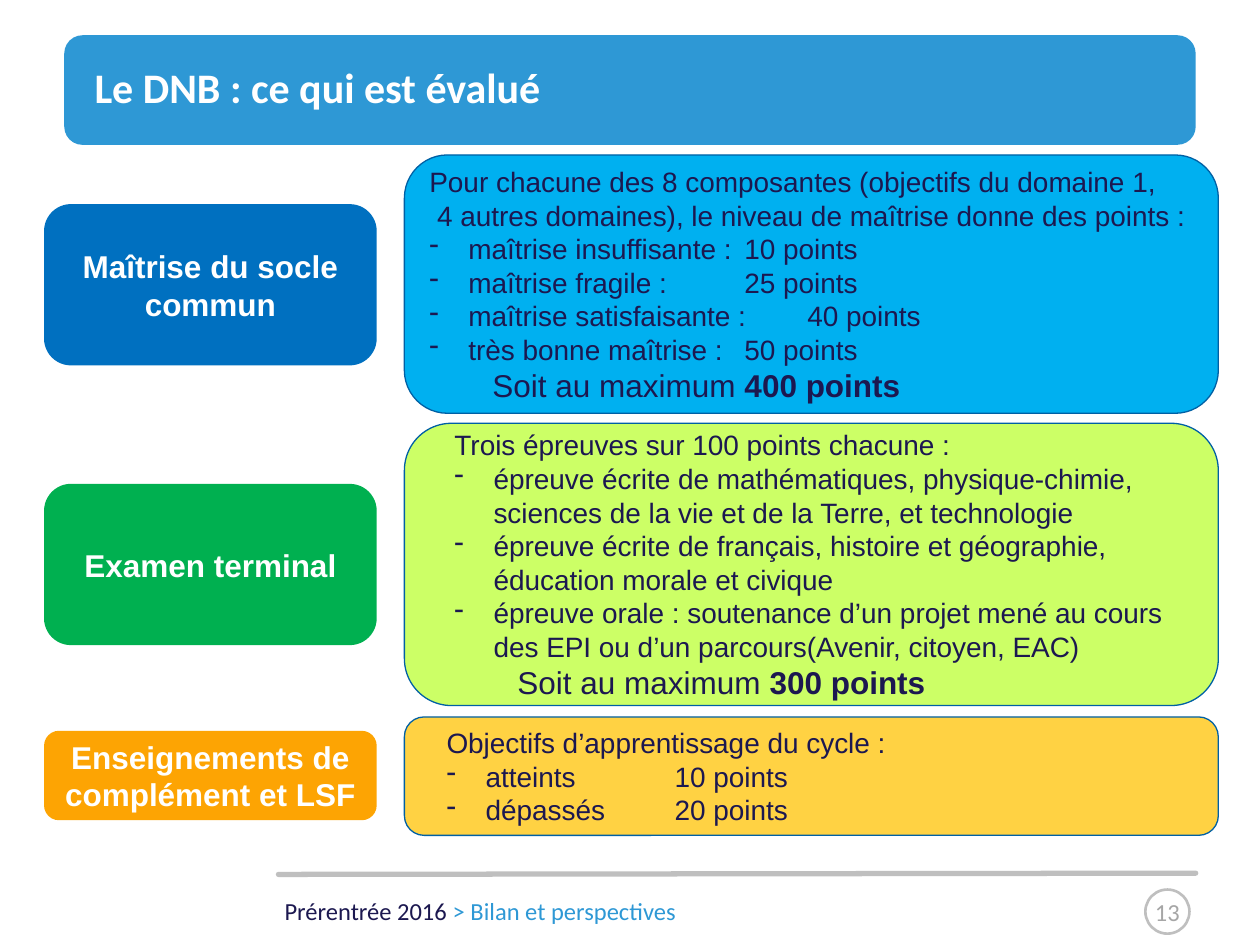
from collections import namedtuple

from lxml.etree import SubElement
from pptx import Presentation
from pptx.dml.color import RGBColor
from pptx.enum.shapes import MSO_CONNECTOR, MSO_SHAPE
from pptx.enum.text import MSO_ANCHOR as Anchor, MSO_AUTO_SIZE as AutoSize, PP_ALIGN as Align
from pptx.oxml.ns import qn
from pptx.util import Inches, Pt

Box = namedtuple("Box", "left top width height")
CELL = Inches(0.1)  # the slide is a grid of 100 columns by 75 rows
COLUMNS, ROWS = 100, 75
LABEL_LEFT, LABEL_WIDTH = 3.5, 26.4
PANEL_LEFT, PANEL_WIDTH = 32.1, 64.6
HANGING = 0.31
INK, WHITE, BLUE, GREY, EDGE = "1C1850", "FFFFFF", "2E98D5", "BFBFBF", "0060A4"


def cells(count):
    return round(count * CELL)


def colour(hex_text):
    return RGBColor.from_string(hex_text)


def add_span(para, text, size, ink=INK, bold=False, font="Arial"):
    span = para.add_run()
    span.text = text
    span.font.size, span.font.bold, span.font.name = Pt(size), bold, font
    span.font.color.rgb = colour(ink)


def add_block(page, kind, box, fill=None, edge=None, edge_width=0.75):
    block = page.shapes.add_shape(kind, *map(cells, box))
    block.shadow.inherit = False
    if fill:
        block.fill.solid()
        block.fill.fore_color.rgb = colour(fill)
    else:
        block.fill.background()
    if edge:
        block.line.color.rgb = colour(edge)
        block.line.width = Pt(edge_width)
    else:
        block.line.fill.background()
    block.text_frame.word_wrap = True
    block.text_frame.vertical_anchor = Anchor.MIDDLE
    return block


def set_indent(para, left, bulleted):
    props = para._p.get_or_add_pPr()
    hang = HANGING if bulleted else 0
    props.set("marL", str(Inches(left + hang)))
    props.set("indent", str(-Inches(hang)))
    if bulleted:
        SubElement(props, qn("a:buFontTx"))
        SubElement(props, qn("a:buChar")).set("char", "-")


def add_title(page, box, text):
    add_block(page, MSO_SHAPE.ROUNDED_RECTANGLE, box, BLUE)
    title = page.shapes.title
    page.shapes._spTree.append(title._element)  # in front of its banner
    title.left, title.top = cells(box.left + 2.4), cells(box.top - 1)
    title.width, title.height = cells(box.width - 2.4), cells(box.height + 1.5)
    frame = title.text_frame
    frame.auto_size, frame.word_wrap = AutoSize.NONE, True
    frame.vertical_anchor = Anchor.MIDDLE
    frame.margin_left = frame.margin_right = frame.margin_top = frame.margin_bottom = 0
    para = frame.paragraphs[0]
    para.alignment = Align.LEFT
    add_span(para, text, 24, WHITE, True, "Calibri")


def add_label(page, box, fill, text):
    label = add_block(page, MSO_SHAPE.ROUNDED_RECTANGLE, box, fill)
    para = label.text_frame.paragraphs[0]
    para.alignment = Align.CENTER
    add_span(para, text, 18, WHITE, True)


def add_panel(page, box, fill, left, intro, items, total=None):
    """Rounded panel: intro lines, dashed items, then the maximum score."""
    panel = add_block(page, MSO_SHAPE.ROUNDED_RECTANGLE, box, fill, EDGE)
    frame = panel.text_frame
    lines = [(text, False) for text in intro] + [(text, True) for text in items]
    for number, (text, bulleted) in enumerate(lines):
        para = frame.add_paragraph() if number else frame.paragraphs[0]
        para.alignment = Align.LEFT
        set_indent(para, left, bulleted)
        add_span(para, text, 16)
    if total:
        para = frame.add_paragraph()
        para.alignment = Align.LEFT
        set_indent(para, left, False)
        add_span(para, "\t", 16)
        add_span(para, "Soit au maximum ", 18)
        add_span(para, total, 18, bold=True)


def add_footer(page, box, event, topic, number):
    rule = page.shapes.add_connector(
        MSO_CONNECTOR.STRAIGHT, cells(box.left), cells(box.top + 0.1),
        cells(box.left + box.width), cells(box.top))
    rule.line.color.rgb = colour(GREY)
    rule.line.width = Pt(3)
    SubElement(rule._element.spPr, qn("a:effectLst"))
    rule.line._get_or_add_ln().set("cap", "rnd")

    text_top = box.top + 1.3
    caption = page.shapes.add_textbox(
        cells(box.left - 0.5), cells(text_top), cells(59.1), cells(3.4))
    caption.text_frame.word_wrap = True
    para = caption.text_frame.paragraphs[0]
    add_span(para, event, 14, font="Calibri")
    add_span(para, topic, 14, BLUE, font="Calibri")

    size = 3.5
    badge_left = box.left + box.width - size - 0.5
    badge = add_block(page, MSO_SHAPE.OVAL, Box(badge_left, text_top, size, size),
                      edge=GREY, edge_width=1.5)
    badge.text_frame.margin_left = badge.text_frame.margin_right = 0
    para = badge.text_frame.paragraphs[0]
    para.alignment = Align.CENTER
    add_span(para, number, 14, "A6A6A6", font="Calibri")


# label, its top, height and fill; panel top, height, fill and text indent; texts
SECTIONS = [
    ("Maîtrise du socle commun", 16.2, 12.8, "0070C0", 12.3, 20.5, "00B0F0", 0,
     ["Pour chacune des 8 composantes (objectifs du domaine 1,",
      " 4 autres domaines), le niveau de maîtrise donne des points :"],
     ["maîtrise insuffisante : \t10 points", "maîtrise fragile : \t\t25 points",
      "maîtrise satisfaisante : \t40 points", "très bonne maîtrise : \t50 points"],
     "400 points"),
    ("Examen terminal", 38.4, 12.8, "00B050", 33.6, 22.4, "CCFF66", 0.19,
     ["Trois épreuves sur 100 points chacune :"],
     ["épreuve écrite de mathématiques, physique-chimie, "
      "sciences de la vie et de la Terre, et technologie",
      "épreuve écrite de français, histoire et géographie, éducation morale et civique",
      "épreuve orale : soutenance d’un projet mené au cours "
      "des EPI ou d’un parcours(Avenir, citoyen, EAC)"],
     "300 points"),
    ("Enseignements de complément et LSF", 58, 7.1, "FDA403", 56.9, 9.4, "FFD243", 0.19,
     ["Objectifs d’apprentissage du cycle :"],
     ["atteints\t\t10 points", "dépassés\t\t20 points"], None),
]


def main():
    deck = Presentation()
    deck.slide_width, deck.slide_height = cells(COLUMNS), cells(ROWS)
    page = deck.slides.add_slide(deck.slide_layouts.get_by_name("Title Only"))
    add_title(page, Box(5.1, 2.8, 89.8, 8.7), "Le DNB : ce qui est évalué")
    for (name, label_top, label_height, label_fill,
         top, height, fill, left, intro, items, total) in SECTIONS:
        add_label(page, Box(LABEL_LEFT, label_top, LABEL_WIDTH, label_height),
                  label_fill, name)
        add_panel(page, Box(PANEL_LEFT, top, PANEL_WIDTH, height),
                  fill, left, intro, items, total)
    add_footer(page, Box(22.1, 69.3, 72.8, 4.8),
               "Prérentrée 2016 ", "> Bilan et perspectives", "13")
    deck.save("out.pptx")


if __name__ == "__main__":
    main()
